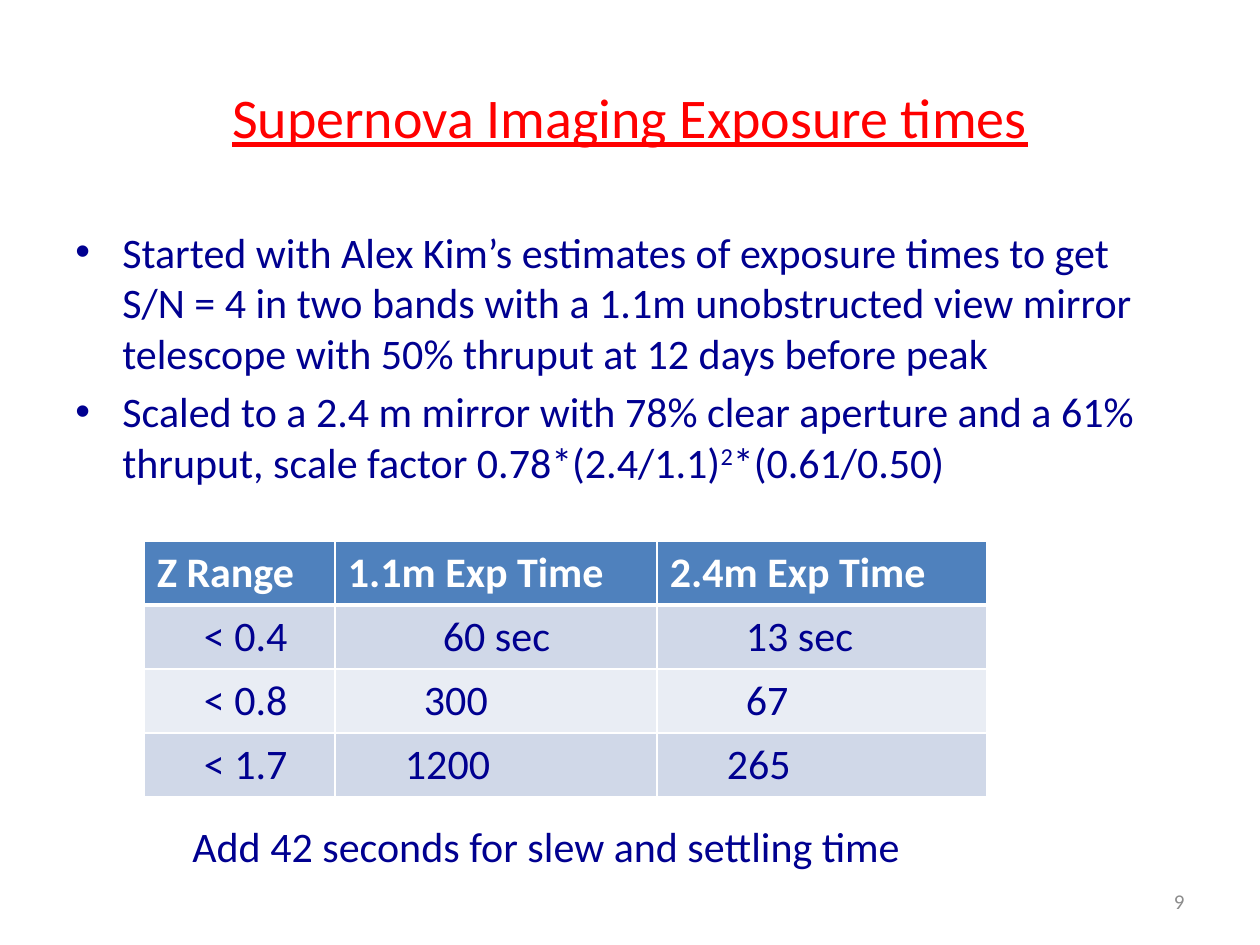
from dataclasses import dataclass

from lxml.etree import SubElement
from pptx import Presentation
from pptx.dml.color import RGBColor
from pptx.enum.text import MSO_ANCHOR, PP_ALIGN
from pptx.oxml.ns import qn
from pptx.util import Emu, Pt

PIXELS_PER_INCH = 126
FONT_NAME = "Calibri"
COLORS = {
    "title": "FF0000",
    "body": "000090",
    "number": "8C8C8C",
    "header": "4F81BD",
    "band_dark": "D0D8E8",
    "band_light": "E9EDF4",
    "white": "FFFFFF",
}


@dataclass(frozen=True)
class TextBlock:
    text: str
    left: int
    top: int
    width: int
    height: int
    size: int = 24
    color: str = "body"
    align: PP_ALIGN = PP_ALIGN.LEFT
    anchor: MSO_ANCHOR = MSO_ANCHOR.TOP
    underline: bool = False
    wrap: bool = True


@dataclass(frozen=True)
class CellText:
    text: str
    indent: int = 0


@dataclass(frozen=True)
class TableRow:
    cells: tuple[CellText, ...]
    fill: str
    color: str = "body"
    bold: bool = False
    bottom_border: int = 1


TITLE = TextBlock("Supernova Imaging Exposure times", 63, 38, 1134, 157, 32, "title",
                  PP_ALIGN.CENTER, MSO_ANCHOR.MIDDLE, underline=True)
BULLETS = TextBlock(
    "Started with Alex Kim’s estimates of exposure times to get\v"
    "S/N = 4 in two bands with a 1.1m unobstructed view mirror "
    "telescope with 50% thruput at 12 days before peak\n"
    "Scaled to a 2.4 m mirror with 78% clear aperture and a 61% "
    "thruput, scale factor 0.78*(2.4/1.1)",
    63, 220, 1134, 624)
SLIDE_NUMBER = TextBlock("9", 903, 876, 294, 50, 12, "number",
                         PP_ALIGN.RIGHT, MSO_ANCHOR.MIDDLE)
FOOTNOTE = TextBlock("Add 42 seconds for slew and settling time",
                     180, 814, 741, 63, wrap=False)

TABLE_LEFT, TABLE_TOP = 144, 541
COLUMN_WIDTHS = (191, 322, 330)
ROW_HEIGHT = 64
CELL_MARGIN = 13
BULLET_INDENT = 47
TABLE_ROWS = (
    TableRow((CellText("Z Range"), CellText("1.1m Exp Time"), CellText("2.4m Exp Time")),
             "header", "white", bold=True, bottom_border=3),
    TableRow((CellText("< 0.4", 47), CellText("60 sec", 95), CellText("13 sec", 76)),
             "band_dark"),
    TableRow((CellText("< 0.8", 47), CellText("300", 76), CellText("67", 76)),
             "band_light"),
    TableRow((CellText("< 1.7", 47), CellText("1200", 57), CellText("265", 57)),
             "band_dark"),
)


def px(length: int) -> Emu:
    return Emu(round(length * 914400 / PIXELS_PER_INCH))


def rgb(name: str) -> RGBColor:
    return RGBColor.from_string(COLORS[name])


def format_runs(paragraph, size: int, color: str, bold=False, underline=False) -> None:
    for run in paragraph.runs:
        run.font.name = FONT_NAME
        run.font.size = Pt(size)
        run.font.color.rgb = rgb(color)
        run.font.bold = bold
        run.font.underline = underline


def add_text(slide, block: TextBlock):
    shape = slide.shapes.add_textbox(px(block.left), px(block.top),
                                     px(block.width), px(block.height))
    text_frame = shape.text_frame
    text_frame.word_wrap = block.wrap
    text_frame.vertical_anchor = block.anchor
    text_frame.text = block.text
    for paragraph in text_frame.paragraphs:
        paragraph.alignment = block.align
        format_runs(paragraph, block.size, block.color, underline=block.underline)
    return shape


def add_bullets(slide, block: TextBlock) -> None:
    """Add the bulleted text, ending with the squared scale factor."""
    paragraphs = add_text(slide, block).text_frame.paragraphs
    exponent = paragraphs[-1].add_run()
    exponent.text = "2"
    exponent._r.get_or_add_rPr().set("baseline", "30000")
    paragraphs[-1].add_run().text = "*(0.61/0.50)"
    for paragraph in paragraphs:
        format_runs(paragraph, block.size, block.color)
        paragraph.space_before = Pt(block.size * 0.2)
        properties = paragraph._p.get_or_add_pPr()
        properties.set("marL", str(px(BULLET_INDENT)))
        properties.set("indent", str(-px(BULLET_INDENT)))
        SubElement(properties, qn("a:buFont"), typeface="Arial")
        SubElement(properties, qn("a:buChar"), char="•")


def set_borders(cell, widths: dict[str, int]) -> None:
    """Draw white cell borders; widths are points by side tag."""
    properties = cell._tc.get_or_add_tcPr()
    for index, (side, width) in enumerate(widths.items()):
        line = SubElement(properties, qn(f"a:{side}"), w=str(Pt(width)))
        fill = SubElement(line, qn("a:solidFill"))
        SubElement(fill, qn("a:srgbClr"), val=COLORS["white"])
        properties.insert(index, line)


def add_exposure_table(slide) -> None:
    table = slide.shapes.add_table(
        len(TABLE_ROWS), len(COLUMN_WIDTHS), px(TABLE_LEFT), px(TABLE_TOP),
        px(sum(COLUMN_WIDTHS)), px(ROW_HEIGHT * len(TABLE_ROWS))).table
    for column, width in zip(table.columns, COLUMN_WIDTHS):
        column.width = px(width)
    top_border = 1
    for table_row, row in zip(table.rows, TABLE_ROWS):
        table_row.height = px(ROW_HEIGHT)
        for cell, content in zip(table_row.cells, row.cells):
            cell.text_frame.text = content.text
            cell.margin_left = px(CELL_MARGIN + content.indent)
            format_runs(cell.text_frame.paragraphs[0], 24, row.color, row.bold)
            cell.fill.solid()
            cell.fill.fore_color.rgb = rgb(row.fill)
            set_borders(cell, {"lnL": 1, "lnR": 1, "lnT": top_border,
                               "lnB": row.bottom_border})
        top_border = row.bottom_border


def main() -> None:
    presentation = Presentation()
    presentation.slide_width = px(1260)
    presentation.slide_height = px(945)
    slide = presentation.slides.add_slide(presentation.slide_layouts[6])
    add_text(slide, TITLE)
    add_bullets(slide, BULLETS)
    add_text(slide, SLIDE_NUMBER)
    add_exposure_table(slide)
    add_text(slide, FOOTNOTE)
    presentation.save("out.pptx")


if __name__ == "__main__":
    main()
